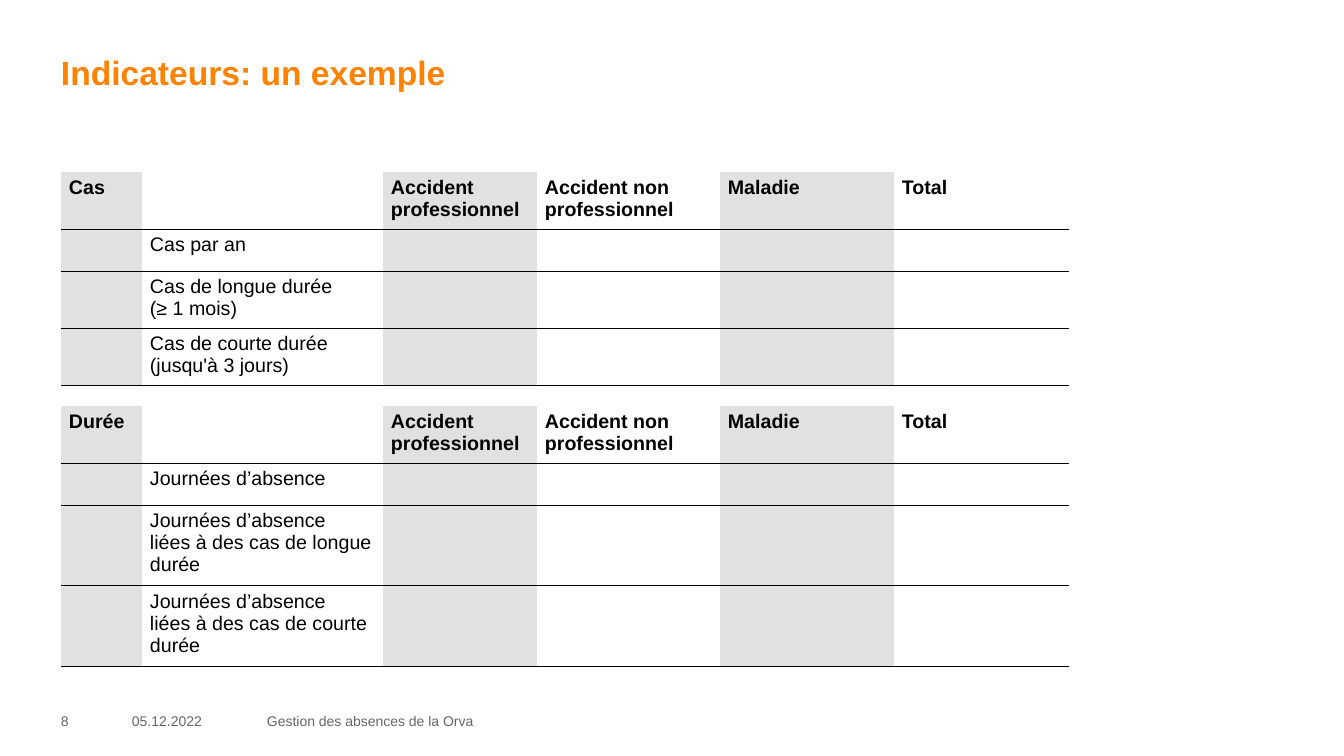
from dataclasses import dataclass

import lxml.etree
import pptx
import pptx.dml.color
import pptx.enum.text
import pptx.oxml.ns
import pptx.util

EMU_PER_PX = 914400 / 100.8
FONT = "Arial"
ORANGE, BLACK, GREY, BAND = "FF8200", "000000", "666666", "E1E1E1"
NO_STYLE_NO_GRID = "{2D5ABB26-0587-4C30-8999-92F81FD0307C}"
TABLE_LEFT = 61
COLUMN_WIDTHS = [81, 241, 154, 183, 174, 175]
CASE_TYPES = ["Accident professionnel", "Accident non professionnel", "Maladie", "Total"]


@dataclass
class Label:
    text: str
    left: int
    top: int
    width: int
    height: int
    size: int = 10
    color: str = GREY
    bold: bool = False
    anchor: pptx.enum.text.MSO_ANCHOR = pptx.enum.text.MSO_ANCHOR.MIDDLE


@dataclass
class IndicatorTable:
    heading: str
    top: int
    indicators: list[str]
    row_heights: list[int]


LABELS = [
    Label("Indicateurs: un exemple", 61, 52, 1222, 95, 24, ORANGE, True,
          pptx.enum.text.MSO_ANCHOR.TOP),
    Label("8", 61, 711, 55, 20),
    Label("05.12.2022", 132, 711, 119, 20),
    Label("Gestion des absences de la Orva", 267, 711, 865, 20),
]

TABLES = [
    IndicatorTable(
        "Cas", 172,
        ["Cas par an", "Cas de longue durée\v(≥ 1 mois)",
         "Cas de courte durée (jusqu'à 3 jours)"],
        [54, 42, 54, 54]),
    IndicatorTable(
        "Durée", 406,
        ["Journées d’absence",
         "Journées d’absence\vliées à des cas de longue durée",
         "Journées d’absence\vliées à des cas de courte durée"],
        [54, 42, 76, 76]),
]


def px(length: int) -> pptx.util.Emu:
    return pptx.util.Emu(round(length * EMU_PER_PX))


def rgb(color: str) -> pptx.dml.color.RGBColor:
    return pptx.dml.color.RGBColor.from_string(color)


def write(text_frame, text: str, size: int, color: str, bold: bool) -> None:
    paragraph = text_frame.paragraphs[0]
    paragraph.text = text
    for run in paragraph.runs:
        run.font.name = FONT
        run.font.size = pptx.util.Pt(size)
        run.font.bold = bold
        run.font.color.rgb = rgb(color)


def add_label(slide, label: Label) -> None:
    shape = slide.shapes.add_textbox(
        px(label.left), px(label.top), px(label.width), px(label.height))
    frame = shape.text_frame
    frame.word_wrap = True
    frame.vertical_anchor = label.anchor
    frame.margin_left = frame.margin_right = frame.margin_top = frame.margin_bottom = 0
    write(frame, label.text, label.size, label.color, label.bold)


def add_bottom_rule(cell) -> None:
    qn = pptx.oxml.ns.qn
    line = lxml.etree.Element(qn("a:lnB"), w=str(pptx.util.Pt(0.67)))
    fill = lxml.etree.SubElement(line, qn("a:solidFill"))
    lxml.etree.SubElement(fill, qn("a:srgbClr"), val=BLACK)
    # Borders come before the fill in the cell properties
    cell._tc.get_or_add_tcPr().insert(0, line)


def add_indicator_table(slide, content: IndicatorTable) -> None:
    rows = [[content.heading, "", *CASE_TYPES]]
    rows += [["", indicator, "", "", "", ""] for indicator in content.indicators]
    frame = slide.shapes.add_table(
        len(rows), len(COLUMN_WIDTHS), px(TABLE_LEFT), px(content.top),
        px(sum(COLUMN_WIDTHS)), px(sum(content.row_heights)))
    table = frame.table
    table.first_row = table.horz_banding = False
    table._tbl.tblPr.find(pptx.oxml.ns.qn("a:tableStyleId")).text = NO_STYLE_NO_GRID
    for column, width in zip(table.columns, COLUMN_WIDTHS):
        column.width = px(width)
    for row, height in zip(table.rows, content.row_heights):
        row.height = px(height)

    for row_index, texts in enumerate(rows):
        for column_index, text in enumerate(texts):
            cell = table.cell(row_index, column_index)
            cell.margin_left = cell.margin_right = px(8)
            cell.margin_top = cell.margin_bottom = px(5)
            # Every other column is shaded
            if column_index % 2 == 0:
                cell.fill.solid()
                cell.fill.fore_color.rgb = rgb(BAND)
            else:
                cell.fill.background()
            add_bottom_rule(cell)
            if text:
                write(cell.text_frame, text, 14, BLACK, row_index == 0)


def main() -> None:
    presentation = pptx.Presentation()
    presentation.slide_width = px(1344)
    presentation.slide_height = px(756)
    slide = presentation.slides.add_slide(presentation.slide_layouts[6])

    # Title and footer
    for label in LABELS:
        add_label(slide, label)

    # Cases and durations
    for content in TABLES:
        add_indicator_table(slide, content)

    presentation.save("out.pptx")


if __name__ == "__main__":
    main()
